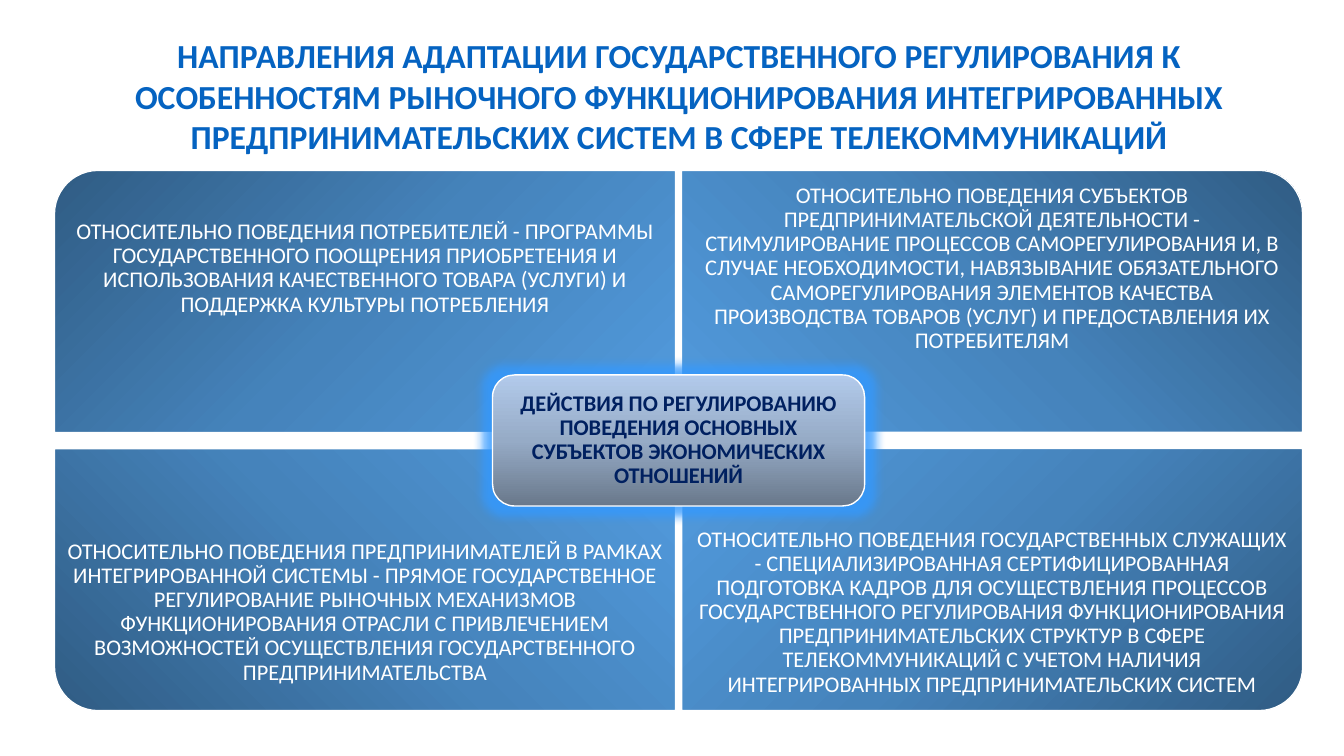
from collections import namedtuple
from dataclasses import dataclass

from lxml import etree
from pptx import Presentation
from pptx.dml.color import RGBColor
from pptx.enum.shapes import MSO_SHAPE as Preset
from pptx.enum.text import MSO_ANCHOR as Anchor, MSO_AUTO_SIZE as AutoSize, PP_ALIGN as Align
from pptx.oxml import parse_xml
from pptx.oxml.ns import nsdecls, qn
from pptx.util import Inches, Pt

Box = namedtuple("Box", "left top width height")
Panel = namedtuple("Panel", "column row rotation shade text")


@dataclass(frozen=True)
class Theme:
    font: str = "Calibri"
    title_size: int = 24
    body_size: int = 16
    title: str = "0563C1"
    white: str = "FFFFFF"
    hub_text: str = "002060"
    glow: str = "3399FF"
    panel_stops: tuple = ("305C84", "4583BB", "529BDE")
    hub_stops: tuple = ("69788B", "96ABC6", "B2CAEB")


THEME = Theme()
DIAGONAL = '<a:lin ang="8100000" scaled="0"/>'
UPWARD = '<a:lin ang="16200000" scaled="0"/>'
FROM_CORNER = '<a:path path="circle"><a:fillToRect l="100000" b="100000"/></a:path>'

TITLE = ("НАПРАВЛЕНИЯ АДАПТАЦИИ ГОСУДАРСТВЕННОГО РЕГУЛИРОВАНИЯ К ОСОБЕННОСТЯМ РЫНОЧНОГО "
         "ФУНКЦИОНИРОВАНИЯ ИНТЕГРИРОВАННЫХ ПРЕДПРИНИМАТЕЛЬСКИХ СИСТЕМ В СФЕРЕ ТЕЛЕКОММУНИКАЦИЙ")
HUB = "ДЕЙСТВИЯ ПО РЕГУЛИРОВАНИЮ ПОВЕДЕНИЯ ОСНОВНЫХ СУБЪЕКТОВ ЭКОНОМИЧЕСКИХ ОТНОШЕНИЙ"
PANELS = [
    Panel(0, 0, 270, DIAGONAL,
          "ОТНОСИТЕЛЬНО ПОВЕДЕНИЯ ПОТРЕБИТЕЛЕЙ - ПРОГРАММЫ ГОСУДАРСТВЕННОГО ПООЩРЕНИЯ "
          "ПРИОБРЕТЕНИЯ И ИСПОЛЬЗОВАНИЯ КАЧЕСТВЕННОГО ТОВАРА (УСЛУГИ) И ПОДДЕРЖКА КУЛЬТУРЫ "
          "ПОТРЕБЛЕНИЯ"),
    Panel(1, 0, 0, FROM_CORNER,
          "ОТНОСИТЕЛЬНО ПОВЕДЕНИЯ СУБЪЕКТОВ ПРЕДПРИНИМАТЕЛЬСКОЙ ДЕЯТЕЛЬНОСТИ - "
          "СТИМУЛИРОВАНИЕ ПРОЦЕССОВ САМОРЕГУЛИРОВАНИЯ И, В СЛУЧАЕ НЕОБХОДИМОСТИ, НАВЯЗЫВАНИЕ "
          "ОБЯЗАТЕЛЬНОГО САМОРЕГУЛИРОВАНИЯ ЭЛЕМЕНТОВ КАЧЕСТВА ПРОИЗВОДСТВА ТОВАРОВ (УСЛУГ) И "
          "ПРЕДОСТАВЛЕНИЯ ИХ ПОТРЕБИТЕЛЯМ"),
    Panel(0, 1, 180, DIAGONAL,
          "ОТНОСИТЕЛЬНО ПОВЕДЕНИЯ ПРЕДПРИНИМАТЕЛЕЙ В РАМКАХ ИНТЕГРИРОВАННОЙ СИСТЕМЫ - ПРЯМОЕ "
          "ГОСУДАРСТВЕННОЕ РЕГУЛИРОВАНИЕ РЫНОЧНЫХ МЕХАНИЗМОВ ФУНКЦИОНИРОВАНИЯ ОТРАСЛИ С "
          "ПРИВЛЕЧЕНИЕМ ВОЗМОЖНОСТЕЙ ОСУЩЕСТВЛЕНИЯ ГОСУДАРСТВЕННОГО ПРЕДПРИНИМАТЕЛЬСТВА"),
    Panel(1, 1, 90, DIAGONAL,
          "ОТНОСИТЕЛЬНО ПОВЕДЕНИЯ ГОСУДАРСТВЕННЫХ СЛУЖАЩИХ - СПЕЦИАЛИЗИРОВАННАЯ "
          "СЕРТИФИЦИРОВАННАЯ ПОДГОТОВКА КАДРОВ ДЛЯ ОСУЩЕСТВЛЕНИЯ ПРОЦЕССОВ ГОСУДАРСТВЕННОГО "
          "РЕГУЛИРОВАНИЯ ФУНКЦИОНИРОВАНИЯ ПРЕДПРИНИМАТЕЛЬСКИХ СТРУКТУР В СФЕРЕ "
          "ТЕЛЕКОММУНИКАЦИЙ С УЧЕТОМ НАЛИЧИЯ ИНТЕГРИРОВАННЫХ ПРЕДПРИНИМАТЕЛЬСКИХ СИСТЕМ"),
]


def inches(box):
    return [Inches(value) for value in box]


def write(shape, text, *, size=THEME.body_size, color=THEME.white, bold=False,
          inset=(0.12, 0.12), spacing=0.9, anchor=Anchor.MIDDLE):
    frame = shape.text_frame
    frame.word_wrap = True
    frame.auto_size = AutoSize.NONE
    frame.vertical_anchor = anchor
    frame.margin_left = frame.margin_right = Inches(inset[0])
    frame.margin_top = frame.margin_bottom = Inches(inset[1])
    para = frame.paragraphs[0]
    para.alignment = Align.CENTER
    para.line_spacing = spacing
    para.space_before = Pt(0)
    span = para.add_run()
    span.text = text
    span.font.name = THEME.font
    span.font.size = Pt(size)
    span.font.bold = bold
    span.font.color.rgb = RGBColor.from_string(color)


def add_shaded(page, preset, box, stops, shade):
    """Add a white-edged shape whose gradient turns with it."""
    shape = page.shapes.add_shape(preset, *inches(box))
    shape.shadow.inherit = False
    shape.line.color.rgb = RGBColor.from_string(THEME.white)
    shape.line.width = Pt(1)
    marks = "".join(f'<a:gs pos="{index * 50000}"><a:srgbClr val="{color}"/></a:gs>'
                    for index, color in enumerate(stops))
    gradient = parse_xml(f'<a:gradFill {nsdecls("a")} rotWithShape="1">'
                         f"<a:gsLst>{marks}</a:gsLst>{shade}</a:gradFill>")
    shape._element.spPr.find(qn("a:prstGeom")).addnext(gradient)
    return shape


def add_title(page, box):
    title = page.shapes.title
    title.left, title.top, title.width, title.height = inches(box)
    write(title, TITLE, size=THEME.title_size, color=THEME.title, bold=True,
          inset=(0.1, 0.05), spacing=1.0, anchor=Anchor.TOP)


def add_panel(page, box, panel):
    """Turn the rounded corner outwards; the text keeps to the outer three quarters."""
    left, top, width, height = box
    outline = box
    if panel.rotation % 180:
        outline = Box(left + (width - height) / 2, top + (height - width) / 2, height, width)
    shape = add_shaded(page, Preset.ROUND_1_RECTANGLE, outline, THEME.panel_stops, panel.shade)
    shape.rotation = panel.rotation
    text_top = top + panel.row * height / 4
    label = page.shapes.add_textbox(*inches(Box(left, text_top, width, height * 3 / 4)))
    write(label, panel.text)


def add_hub(page, box):
    hub = add_shaded(page, Preset.ROUNDED_RECTANGLE, box, THEME.hub_stops, UPWARD)
    effects = hub._element.spPr.find(qn("a:effectLst"))
    glow = etree.SubElement(effects, qn("a:glow"), rad=str(Inches(0.2)))
    color = etree.SubElement(glow, qn("a:srgbClr"), val=THEME.glow)
    etree.SubElement(color, qn("a:alpha"), val="80000")
    write(hub, HUB, color=THEME.hub_text, bold=True, inset=(0.07, 0.07))


def add_matrix(page, box, gap_x=0.06, gap_y=0.16, hub_width=3.69, hub_height=1.3):
    """Place four panels in the box and the hub over its centre."""
    width, height = (box.width - gap_x) / 2, (box.height - gap_y) / 2
    for panel in PANELS:
        left = box.left + panel.column * (width + gap_x)
        top = box.top + panel.row * (height + gap_y)
        add_panel(page, Box(left, top, width, height), panel)
    add_hub(page, Box(box.left + (box.width - hub_width) / 2,
                      box.top + (box.height - hub_height) / 2, hub_width, hub_height))


def main():
    deck = Presentation()
    deck.slide_width, deck.slide_height = Inches(13.33), Inches(7.5)
    page = deck.slides.add_slide(deck.slide_layouts[5])
    add_title(page, Box(0.51, 0.3, 12.45, 1.31))
    add_matrix(page, Box(0.54, 1.69, 12.38, 5.36))
    deck.save("out.pptx")


if __name__ == "__main__":
    main()
